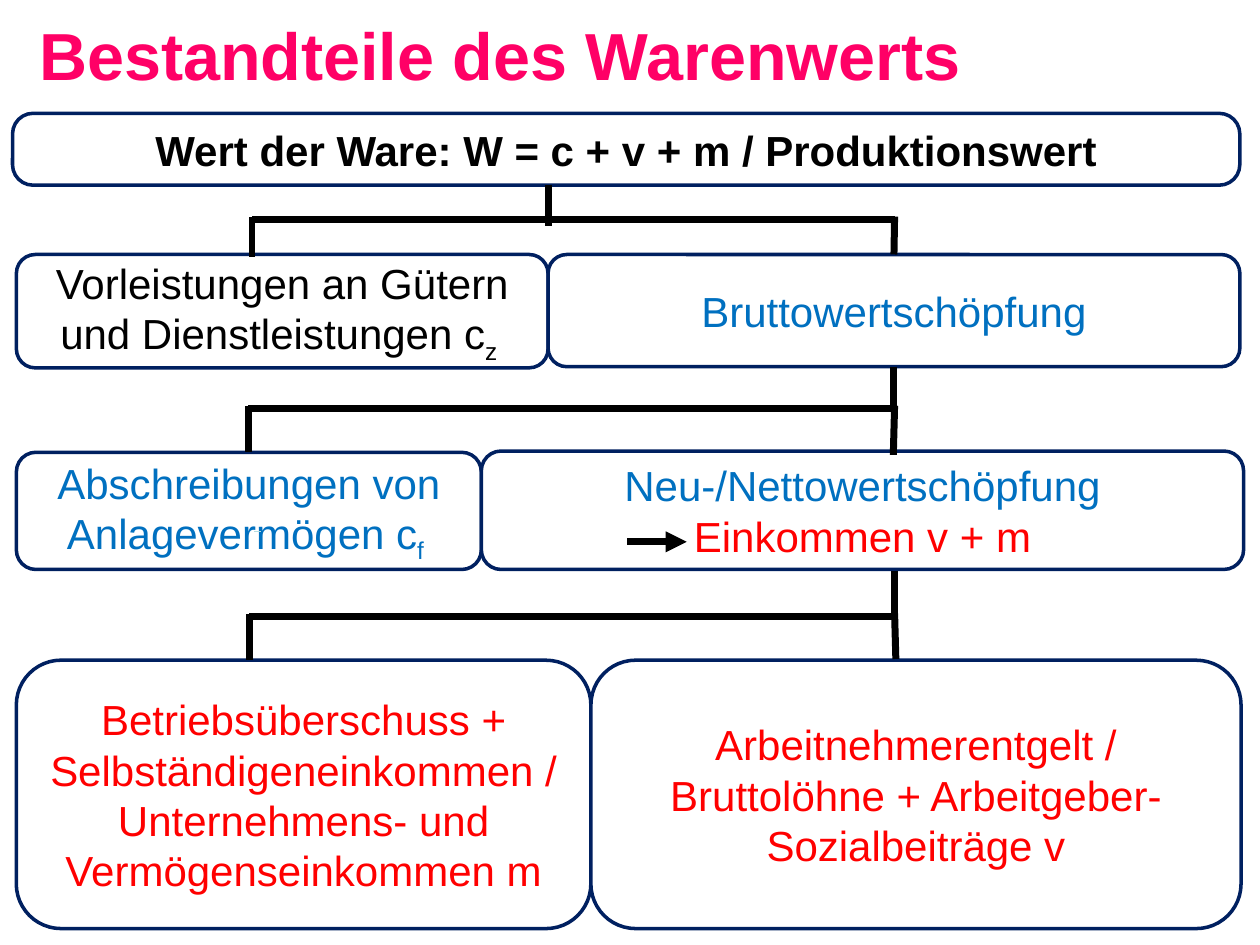
from dataclasses import dataclass

from lxml import etree
from pptx import Presentation
from pptx.dml.color import RGBColor
from pptx.enum.shapes import MSO_CONNECTOR, MSO_SHAPE
from pptx.enum.text import MSO_ANCHOR, MSO_AUTO_SIZE, PP_ALIGN
from pptx.oxml.ns import qn
from pptx.util import Pt

STRAIGHT, ELBOW = MSO_CONNECTOR.STRAIGHT, MSO_CONNECTOR.ELBOW
ROUNDED = MSO_SHAPE.ROUNDED_RECTANGLE
TOP, MIDDLE = MSO_ANCHOR.TOP, MSO_ANCHOR.MIDDLE
LEFT, CENTER = PP_ALIGN.LEFT, PP_ALIGN.CENTER
GROW = MSO_AUTO_SIZE.SHAPE_TO_FIT_TEXT
TITLE_ONLY = 5
TOP_SITE, BOTTOM_SITE = 0, 2
EMU_PER_PX = 9144


@dataclass(frozen=True)
class Theme:
    font: str = "Arial"
    title: str = "FF0066"
    black: str = "000000"
    blue: str = "0070C0"
    red: str = "FF0000"
    border: str = "002060"
    surface: str = "FFFFFF"
    faint: str = "B6DCDF"
    title_size: int = 38
    body_size: int = 24
    border_width: float = 2
    branch_width: float = 4
    faint_width: float = 0.75


THEME = Theme()


def px(*lengths):
    return [length * EMU_PER_PX for length in lengths]


def rgb(value):
    return RGBColor.from_string(value)


def add_span(para, text, color, size=THEME.body_size, bold=False, subscript=False):
    span = para.add_run()
    span.text = text
    for name, value in {"name": THEME.font, "size": Pt(size), "bold": bold}.items():
        setattr(span.font, name, value)
    span.font.color.rgb = rgb(color)
    if subscript:
        span.font._element.set("baseline", "-25000")


def place_title(page, box, text):
    title = page.shapes.title
    for name, value in zip(("left", "top", "width", "height"), px(*box)):
        setattr(title, name, value)
    frame = title.text_frame
    for name, value in {"word_wrap": True, "vertical_anchor": TOP, "auto_size": GROW}.items():
        setattr(frame, name, value)
    para = frame.paragraphs[0]
    para.alignment = LEFT
    add_span(para, text, THEME.title, THEME.title_size, bold=True)


def place_node(page, box, lines, bold=False, corner=None):
    node = page.shapes.add_shape(ROUNDED, *px(*box))
    node.shadow.inherit = False
    if corner is not None:
        node.adjustments[0] = corner
    node.fill.solid()
    node.fill.fore_color.rgb = rgb(THEME.surface)
    node.line.color.rgb = rgb(THEME.border)
    node.line.width = Pt(THEME.border_width)
    frame = node.text_frame
    frame.word_wrap = True
    frame.vertical_anchor = MIDDLE
    para = frame.paragraphs[0]
    para.alignment = CENTER
    for index, (color, text, subscript) in enumerate(lines):
        if index:
            para.add_line_break()
        add_span(para, text, color, bold=bold)
        if subscript:
            add_span(para, subscript, color, subscript=True)
    return node


def place_line(page, start, end, kind=STRAIGHT, color=THEME.black, width=THEME.branch_width):
    line = page.shapes.add_connector(kind, *px(*start, *end))
    line.line.color.rgb = rgb(color)
    line.line.width = Pt(width)
    etree.SubElement(line._element.spPr, qn("a:effectLst"))
    return line


def place_arrow(page, start, end):
    arrow = place_line(page, start, end)
    etree.SubElement(arrow.line._get_or_add_ln(), qn("a:tailEnd"), type="triangle")


def place_fork(page, box, stem):
    left, top, width, height = box
    right, bottom = left + width, top + height
    stem_x, stem_top = stem
    place_line(page, (left, top), (right, top))
    place_line(page, (left, top - 2), (left, bottom + 2))
    place_line(page, (stem_x, stem_top), (stem_x, top + 5))
    return place_line(page, (right, top - 2), (right, bottom))


def place_split(page, box, bar, right_foot):
    left, top, width, height = box
    right, bottom = left + width, top + height
    elbow = place_line(page, (right, top), (left, bar), ELBOW)
    guides = elbow._element.spPr.find(qn("a:prstGeom")).get_or_add_avLst()
    etree.SubElement(guides, qn("a:gd"), name="adj1", fmla="val 0")
    place_line(page, (left, bar - 2), (left, bottom))
    place_line(page, (right, bar - 2), right_foot)
    return elbow


def build_tree(page):
    place_node(
        page, (10, 90, 974, 57),
        [(THEME.black, "Wert der Ware: W = c + v + m / Produktionswert", "")],
        bold=True, corner=0.285,
    )
    place_node(
        page, (13, 202, 422, 90),
        [(THEME.black, "Vorleistungen an Gütern und Dienstleistungen c", "z ")],
    )
    gross = place_node(page, (435, 202, 549, 89), [(THEME.blue, "Bruttowertschöpfung", "")])
    place_node(
        page, (13, 359, 369, 93),
        [(THEME.blue, "Abschreibungen von Anlagevermögen c", "f ")],
    )
    place_node(
        page, (382, 358, 605, 94),
        [(THEME.blue, "Neu-/Nettowertschöpfung", ""), (THEME.red, "Einkommen v + m", "")],
    )
    place_node(
        page, (13, 524, 456, 213),
        [(THEME.red, "Betriebsüberschuss + Selbständigeneinkommen / "
                     "Unternehmens- und Vermögenseinkommen m", "")],
    )
    place_node(
        page, (469, 524, 516, 213),
        [(THEME.red, "Arbeitnehmerentgelt / Bruttolöhne + Arbeitgeber- Sozialbeiträge v", "")],
    )
    place_line(page, (202, 422), (207, 422), color=THEME.faint, width=THEME.faint_width)
    place_arrow(page, (498, 430), (545, 430))

    gross_drop = place_fork(page, (200, 174, 510, 28), (435, 147))
    gross_drop.end_connect(gross, TOP_SITE)
    gross_split = place_split(page, (197, 291, 513, 68), 324, (709, 361))
    gross_split.begin_connect(gross, BOTTOM_SITE)
    place_split(page, (198, 453, 512, 71), 489, (711, 523))


def main():
    deck = Presentation()
    deck.slide_width, deck.slide_height = px(1000, 750)
    page = deck.slides.add_slide(deck.slide_layouts[TITLE_ONLY])
    place_title(page, (21, 6, 965, 74), "Bestandteile des Warenwerts")
    build_tree(page)
    deck.save("out.pptx")


if __name__ == "__main__":
    main()
